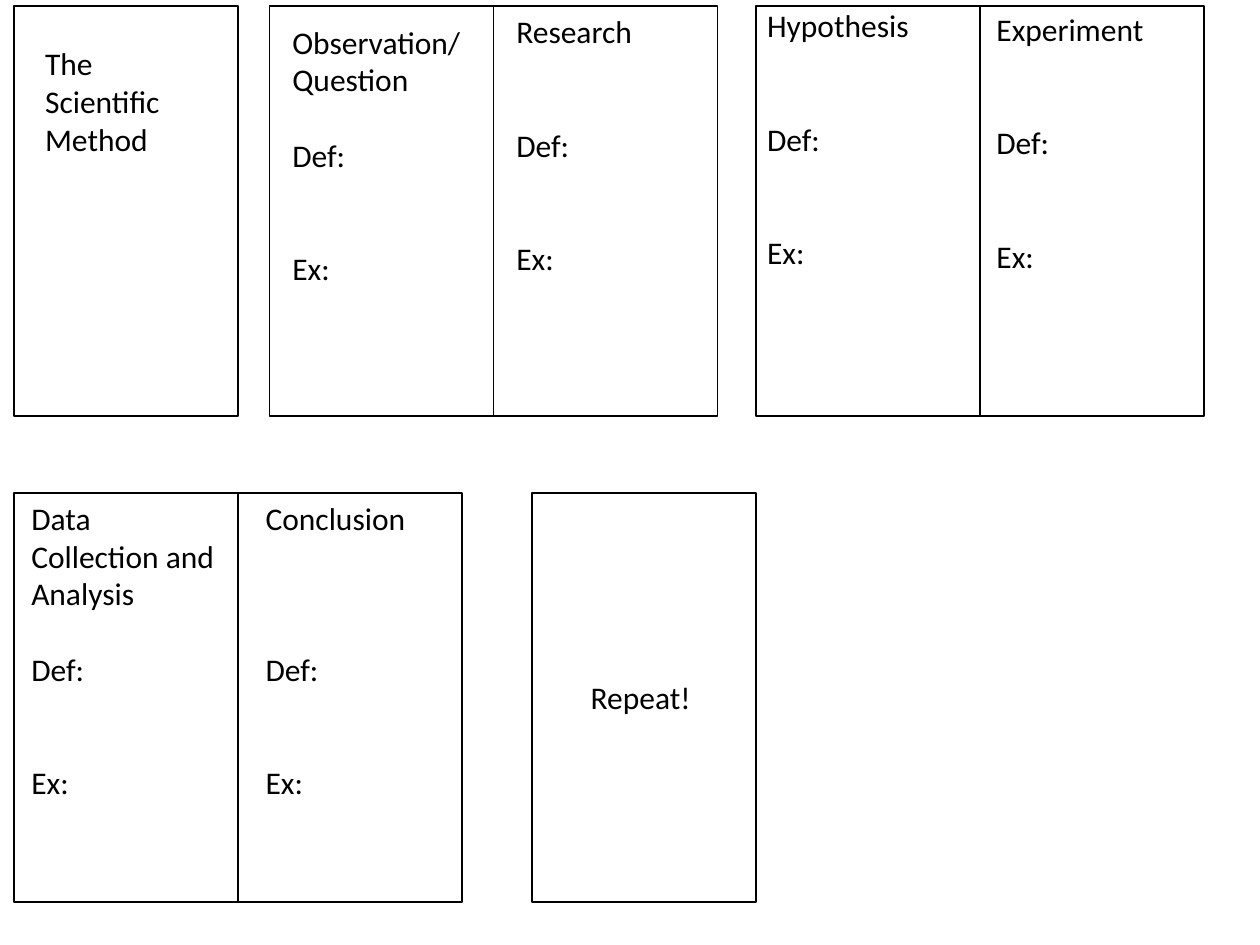
from pptx import Presentation
from pptx.dml.color import RGBColor
from pptx.enum.shapes import MSO_SHAPE as SHAPE
from pptx.enum.text import MSO_AUTO_SIZE as AUTO
from pptx.util import Pt

COLORS = {"card": "FFFFFF", "ink": "000000"}
CARD_W, CARD_H = 128, 234
TEXT_W = 122
LINE = 21.6
ROW_1, ROW_2 = 3.6, 281.5

prs = Presentation()
prs.slide_width, prs.slide_height = Pt(720), Pt(540)
s = prs.slides.add_slide(prs.slide_layouts[6])

# card left, card top, text left, text top, text width, text height, heading, lines skipped before Def
cards = [
    (8, ROW_1, 18.7, 21.6, 103, 72.7, "The Scientific Method", None),
    (154, ROW_1, 160, 9.4, TEXT_W, 160, "Observation/Question", 1),
    (282, ROW_1, 288, 3.6, TEXT_W, 160, "Research", 2),
    (432, ROW_1, 431.3, 0, TEXT_W, 160, "Hypothesis", 2),
    (560, ROW_1, 562.3, 2.2, TEXT_W, 160, "Experiment", 2),
    (8, ROW_2, 10.8, ROW_2, TEXT_W, 181.4, "Data Collection and Analysis", 1),
    (136, ROW_2, 144.7, ROW_2, TEXT_W, 181.4, "Conclusion", 3),
    (304, ROW_2, 330.5, 383.8, TEXT_W, 29, "Repeat!", None),
]

for left, top, *_ in cards:
    sp = s.shapes.add_shape(SHAPE.RECTANGLE, Pt(left), Pt(top), Pt(CARD_W), Pt(CARD_H))
    sp.shadow.inherit = False
    sp.fill.solid()
    sp.fill.fore_color.rgb = RGBColor.from_string(COLORS["card"])
    sp.line.color.rgb = RGBColor.from_string(COLORS["ink"])
    sp.line.width = Pt(1)

for _, _, left, top, width, height, heading, skipped in cards:
    tf = s.shapes.add_textbox(Pt(left), Pt(top), Pt(width), Pt(height)).text_frame
    tf.word_wrap = True
    tf.auto_size = AUTO.SHAPE_TO_FIT_TEXT
    lines = [(heading, 0)]
    if skipped is not None:
        lines += [("Def:", skipped), ("Ex:", 2)]
    tf.text = "\n".join(text for text, _ in lines)
    for p, (_, gap) in zip(tf.paragraphs, lines):
        p.space_before = Pt(gap * LINE)
        for r in p.runs:
            r.font.name = "Calibri"
            r.font.size = Pt(18)
            r.font.color.rgb = RGBColor.from_string(COLORS["ink"])

prs.save("out.pptx")
